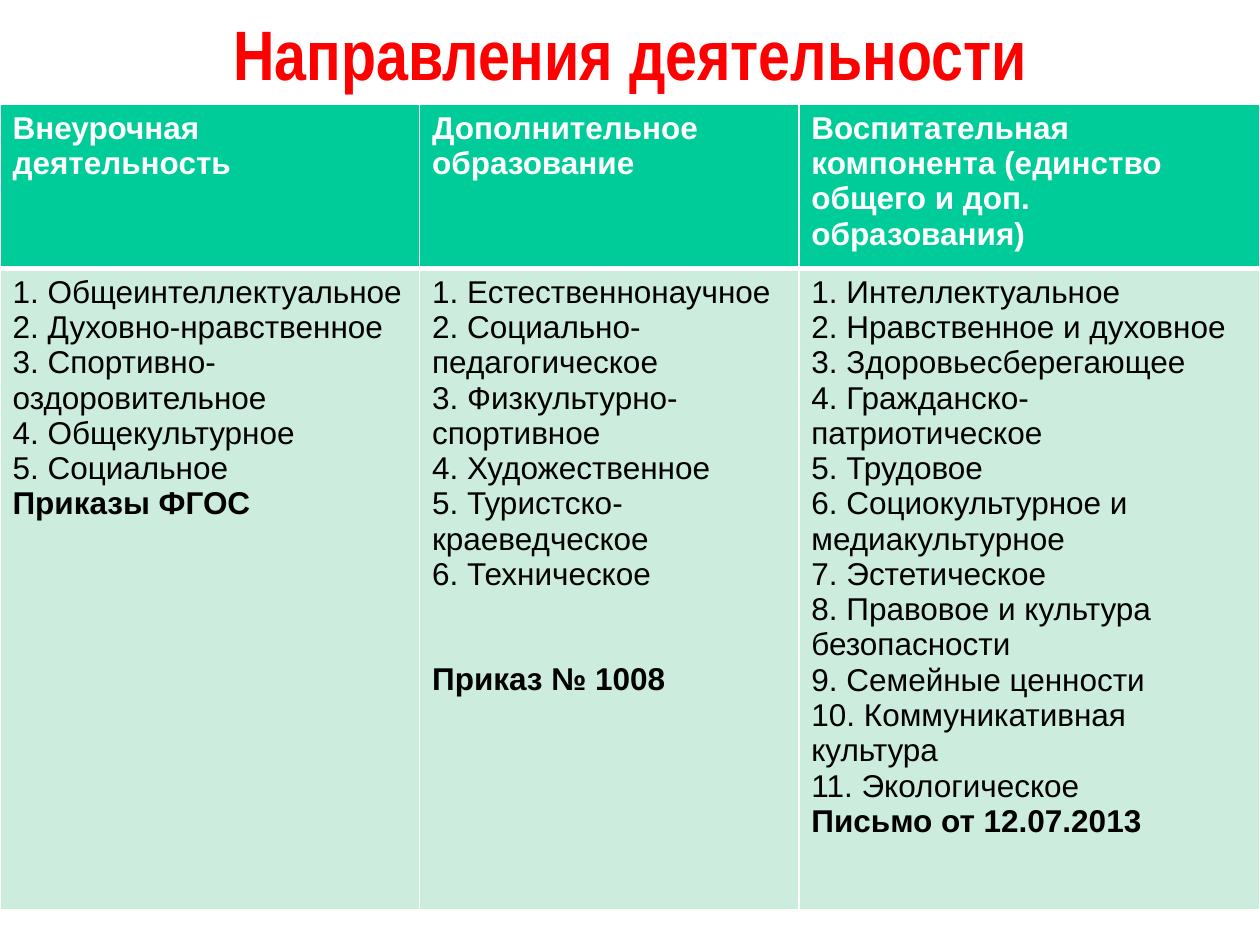
from dataclasses import dataclass

from lxml.etree import SubElement
from pptx import Presentation
from pptx.dml.color import RGBColor as RGB
from pptx.enum.text import MSO_ANCHOR as Anchor, PP_ALIGN as Align
from pptx.oxml.ns import qn
from pptx.util import Inches, Pt


@dataclass(frozen=True)
class Theme:
    title_font: str = "Arial Narrow"
    body_font: str = "Arial"
    title_size: int = 40
    body_size: int = 18
    red: str = "FF0000"
    white: str = "FFFFFF"
    black: str = "000000"
    green: str = "00CC99"
    mint: str = "CCECDE"


THEME = Theme()


def style(paragraph, face, size, color, bold):
    font = paragraph.font
    font.name, font.size, font.bold = face, Pt(size), bold
    font.color.rgb = RGB.from_string(color)


def paint(cell, fill, top, bottom):
    properties = cell._tc.get_or_add_tcPr()
    for side, width in (("L", 1), ("R", 1), ("T", top), ("B", bottom)):
        line = SubElement(properties, qn(f"a:ln{side}"), w=str(Pt(width)))
        SubElement(SubElement(line, qn("a:solidFill")), qn("a:srgbClr"), val=THEME.white)
    cell.fill.solid()
    cell.fill.fore_color.rgb = RGB.from_string(fill)


columns = [
    (3.33, "Внеурочная деятельность", [
        "Общеинтеллектуальное",
        "Духовно-нравственное",
        "Спортивно-оздоровительное",
        "Общекультурное",
        "Социальное",
    ], "Приказы ФГОС", 0),
    (3.01, "Дополнительное образование", [
        "Естественнонаучное",
        "Социально-педагогическое",
        "Физкультурно-спортивное",
        "Художественное",
        "Туристско-краеведческое",
        "Техническое",
    ], "Приказ № 1008", 40),
    (3.66, "Воспитательная компонента (единство общего и доп. образования)", [
        "Интеллектуальное",
        "Нравственное и духовное",
        "Здоровьесберегающее",
        "Гражданско-патриотическое",
        "Трудовое",
        "Социокультурное и медиакультурное",
        "Эстетическое",
        "Правовое и культура безопасности",
        "Семейные ценности",
        "Коммуникативная культура",
        "Экологическое",
    ], "Письмо от 12.07.2013", 0),
]

deck = Presentation()
deck.slide_width, deck.slide_height = Inches(10), Inches(7.5)
slide = deck.slides.add_slide(deck.slide_layouts[6])

heading = slide.shapes.add_textbox(0, 0, Inches(10), Inches(0.83)).text_frame
heading.word_wrap = True
heading.vertical_anchor = Anchor.MIDDLE
heading.text = "Направления деятельности"
heading.paragraphs[0].alignment = Align.CENTER
style(heading.paragraphs[0], THEME.title_font, THEME.title_size, THEME.red, True)

directions = slide.shapes.add_table(
    2, len(columns), 0, Inches(0.83), Inches(10), Inches(6.31)
).table
directions.rows[0].height = Inches(1.22)
directions.rows[1].height = Inches(5.09)

for index, (width, area, items, document, gap) in enumerate(columns):
    directions.columns[index].width = Inches(width)

    area_cell = directions.cell(0, index)
    paint(area_cell, THEME.green, 1, 3)
    area_cell.text = area
    style(area_cell.text_frame.paragraphs[0], THEME.body_font, THEME.body_size, THEME.white, True)

    items_cell = directions.cell(1, index)
    paint(items_cell, THEME.mint, 3, 1)
    numbered = [f"{number}. {item}" for number, item in enumerate(items, 1)]
    items_cell.text = "\n".join(numbered + [document])
    paragraphs = items_cell.text_frame.paragraphs
    for paragraph in paragraphs:
        style(paragraph, THEME.body_font, THEME.body_size, THEME.black, False)
    paragraphs[-1].font.bold = True
    if gap:
        paragraphs[-1].space_before = Pt(gap)

deck.save("out.pptx")
